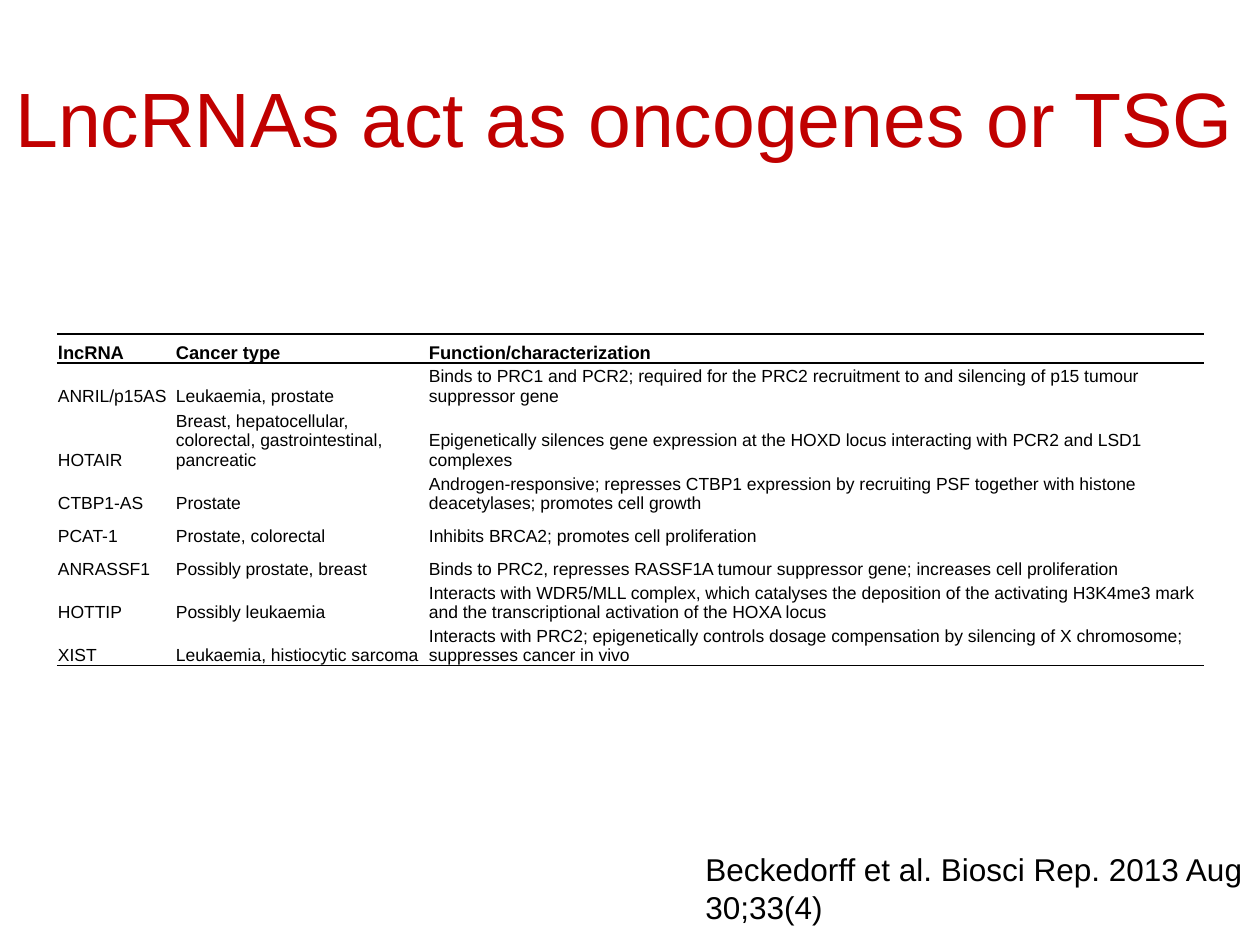
import pptx
import pptx.util
import pptx.dml.color
import pptx.enum.text
import pptx.oxml
import pptx.oxml.ns

# Content
TITLE = "LncRNAs act as oncogenes or TSG"
CITATION = "Beckedorff et al. Biosci Rep. 2013 Aug 30;33(4)"
ROWS = [
    ("lncRNA", "Cancer type", "Function/characterization"),
    ("ANRIL/p15AS", "Leukaemia, prostate",
     "Binds to PRC1 and PCR2; required for the PRC2 recruitment to and silencing of p15 tumour suppressor gene"),
    ("HOTAIR", "Breast, hepatocellular, colorectal, gastrointestinal, pancreatic",
     "Epigenetically silences gene expression at the HOXD locus interacting with PCR2 and LSD1 complexes"),
    ("CTBP1-AS", "Prostate",
     "Androgen-responsive; represses CTBP1 expression by recruiting PSF together with histone deacetylases; "
     "promotes cell growth"),
    ("PCAT-1", "Prostate, colorectal", "Inhibits BRCA2; promotes cell proliferation"),
    ("ANRASSF1", "Possibly prostate, breast",
     "Binds to PRC2, represses RASSF1A tumour suppressor gene; increases cell proliferation"),
    ("HOTTIP", "Possibly leukaemia",
     "Interacts with WDR5/MLL complex, which catalyses the deposition of the activating H3K4me3 mark "
     "and the transcriptional activation of the HOXA locus"),
    ("XIST", "Leukaemia, histiocytic sarcoma",
     "Interacts with PRC2; epigenetically controls dosage compensation by silencing of X chromosome; "
     "suppresses cancer in vivo"),
]

# Style and geometry, in px
PX = 914400 // 126
FONT = "Arial"
COLORS = {"title": "C00000", "text": "000000", "rule": "000000"}
COLUMN_WIDTHS = [118, 253, 776]
HEADER_HEIGHT, ROW_HEIGHT = 29, 33
TABLE_LEFT, TABLE_TOP = 57, 334
ANCHOR = pptx.enum.text.MSO_ANCHOR


def px(value):
    return pptx.util.Emu(value * PX)


def style_text(text_frame, size, color, bold=False):
    for paragraph in text_frame.paragraphs:
        for run in paragraph.runs:
            run.font.name = FONT
            run.font.size = pptx.util.Pt(size)
            run.font.bold = bold
            run.font.color.rgb = pptx.dml.color.RGBColor.from_string(COLORS[color])


def add_text(slide, box, text, size, color):
    text_frame = slide.shapes.add_textbox(*map(px, box)).text_frame
    text_frame.word_wrap = True
    text_frame.text = text
    style_text(text_frame, size, color)
    return text_frame


def set_borders(cell, ruled_sides):
    properties = cell._tc.get_or_add_tcPr()
    for index, side in enumerate(("L", "R", "T", "B")):
        if side in ruled_sides:
            width = pptx.util.Pt(1)
            fill = f'<a:solidFill><a:srgbClr val="{COLORS["rule"]}"/></a:solidFill>'
        else:
            width, fill = 0, "<a:noFill/>"
        line = pptx.oxml.parse_xml(
            f'<a:ln{side} {pptx.oxml.ns.nsdecls("a")} w="{width}">{fill}</a:ln{side}>')
        properties.insert(index, line)


def add_lncrna_table(slide):
    heights = [HEADER_HEIGHT] + [ROW_HEIGHT] * (len(ROWS) - 1)
    box = (TABLE_LEFT, TABLE_TOP, sum(COLUMN_WIDTHS), sum(heights))
    table = slide.shapes.add_table(len(ROWS), len(COLUMN_WIDTHS), *map(px, box)).table
    table.first_row = table.horz_banding = False
    for column, width in zip(table.columns, COLUMN_WIDTHS):
        column.width = px(width)
    for row_index, (row, height, texts) in enumerate(zip(table.rows, heights, ROWS)):
        row.height = px(height)
        is_header = row_index == 0
        # Rules above and below the header, and below the last row
        ruled_sides = {0: "TB", 1: "T", len(ROWS) - 1: "B"}.get(row_index, "")
        for cell, text in zip(row.cells, texts):
            cell.text = text
            cell.vertical_anchor = ANCHOR.BOTTOM
            cell.margin_left = cell.margin_right = cell.margin_top = px(1)
            cell.margin_bottom = 0
            cell.fill.background()
            style_text(cell.text_frame, 10.5 if is_header else 10, "text", is_header)
            set_borders(cell, ruled_sides)


def main():
    presentation = pptx.Presentation()
    presentation.slide_width, presentation.slide_height = px(1260), px(945)
    slide = presentation.slides.add_slide(presentation.slide_layouts[6])

    # Title
    title = add_text(slide, (0, 38, 1250, 158), TITLE, 44, "title")
    title.vertical_anchor = ANCHOR.MIDDLE
    title.paragraphs[0].alignment = pptx.enum.text.PP_ALIGN.CENTER

    add_lncrna_table(slide)

    # Citation
    citation = add_text(slide, (693, 844, 567, 89), CITATION, 18, "text")
    citation.auto_size = pptx.enum.text.MSO_AUTO_SIZE.SHAPE_TO_FIT_TEXT

    presentation.save("out.pptx")


if __name__ == "__main__":
    main()
